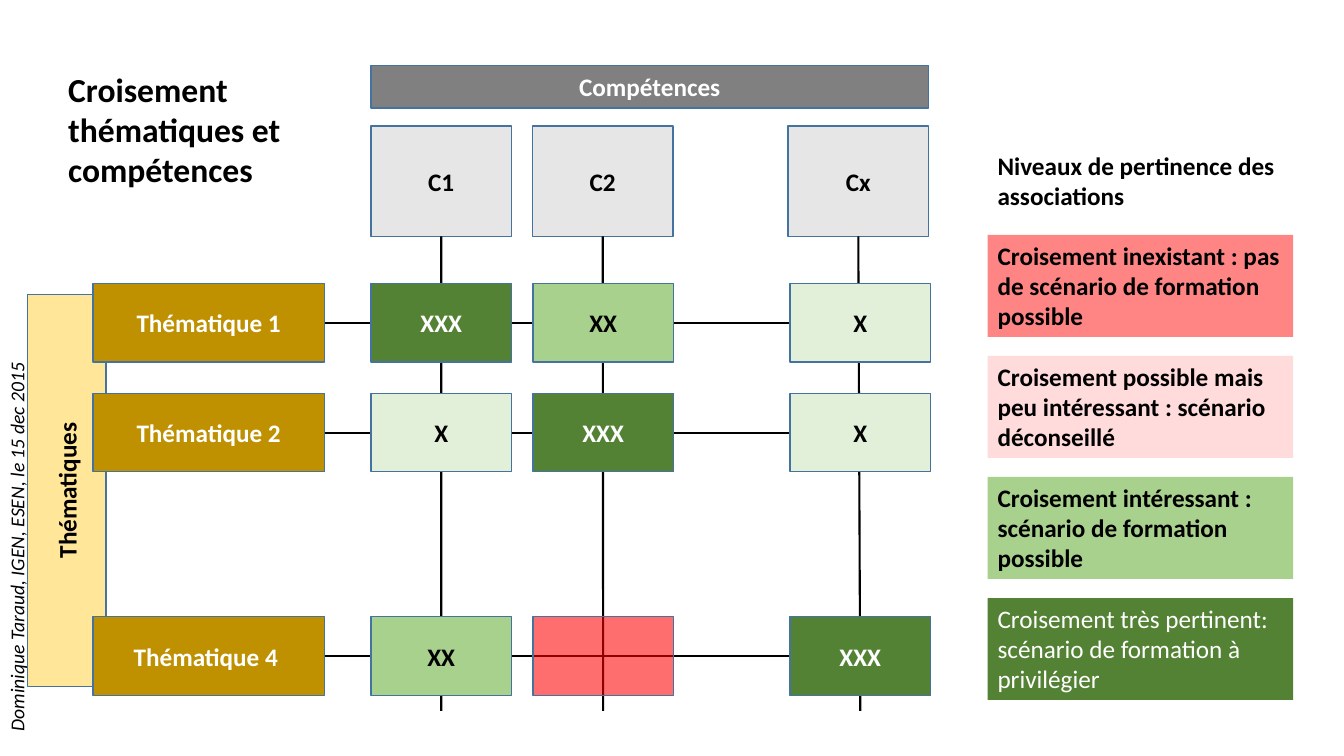
from lxml.etree import SubElement
from pptx import Presentation
from pptx.dml.color import RGBColor
from pptx.enum.shapes import MSO_CONNECTOR, MSO_SHAPE
from pptx.enum.text import MSO_ANCHOR, MSO_AUTO_SIZE, PP_ALIGN
from pptx.oxml.ns import qn
from pptx.util import Cm, Pt

BLACK, WHITE = "000000", "FFFFFF"
DARK_GREEN, GREEN, PALE_GREEN, RED = "548235", "A9D18E", "E2F0D9", "FF0000"

prs = Presentation()
prs.slide_width, prs.slide_height = Cm(33.87), Cm(19.05)
slide = prs.slides.add_slide(prs.slide_layouts[6])


def add_box(left, top, width, height, text, color=BLACK, fill=None, alpha=100,
            bordered=False, size=18, bold=True, italic=False):
    frame = Cm(left), Cm(top), Cm(width), Cm(height)
    if bordered:
        sp = slide.shapes.add_shape(MSO_SHAPE.RECTANGLE, *frame)
        sp.shadow.inherit = False
        sp.line.color.rgb = RGBColor.from_string("43739E")
        sp.line.width = Pt(1)
    else:
        sp = slide.shapes.add_textbox(*frame)
    if fill:
        sp.fill.solid()
        sp.fill.fore_color.rgb = RGBColor.from_string(fill)
    if alpha < 100:
        srgb = sp.element.spPr.find(qn("a:solidFill")).find(qn("a:srgbClr"))
        SubElement(srgb, qn("a:alpha")).set("val", str(alpha * 1000))
    tf = sp.text_frame
    tf.word_wrap = True
    tf.vertical_anchor = MSO_ANCHOR.MIDDLE if bordered else MSO_ANCHOR.TOP
    tf.auto_size = MSO_AUTO_SIZE.NONE if bordered else MSO_AUTO_SIZE.SHAPE_TO_FIT_TEXT
    tf.text = text
    p = tf.paragraphs[0]
    p.alignment = PP_ALIGN.CENTER if bordered else PP_ALIGN.LEFT
    for r in p.runs:
        r.font.name = "Calibri"
        r.font.size = Pt(size)
        r.font.bold = bold
        r.font.italic = italic
        r.font.color.rgb = RGBColor.from_string(color)
    return sp


def add_line(x1, y1, x2, y2):
    line = slide.shapes.add_connector(MSO_CONNECTOR.STRAIGHT, Cm(x1), Cm(y1), Cm(x2), Cm(y2))
    line.line.color.rgb = RGBColor.from_string(BLACK)
    line.line.width = Pt(1.5)
    SubElement(line.element.spPr, qn("a:effectLst"))
    return line


credit = add_box(-6.27, 11.56, 13.39, 0.86, "Dominique Taraud, IGEN, ESEN, le 15 dec 2015",
                 size=14, bold=False, italic=True)
credit.rotation = 270
add_box(1.47, 1.6, 6.65, 3.33, "Croisement thématiques et compétences", size=24)

themes = add_box(0.69, 7.42, 1.98, 9.88, "Thématiques", fill="FFE699", bordered=True)
themes.element.txBody.bodyPr.set("vert", "vert270")
add_box(9.35, 1.65, 14.05, 1.07, "Compétences", WHITE, "808080", bordered=True)

cell_w, cell_h = 3.54, 1.98
columns = [("C1", 9.35, 9.35), ("C2", 13.42, 13.43), ("Cx", 19.86, 19.91)]
rows = [
    ("Thématique 1", 7.14, ("XXX", "XX", "X")),
    ("Thématique 2", 9.91, ("X", "XXX", "X")),
    ("Thématique 4 ", 15.54, ("XX", "", "XXX")),
]
levels = {
    "XXX": (WHITE, DARK_GREEN, 100),
    "XX": (BLACK, GREEN, 100),
    "X": (BLACK, PALE_GREEN, 100),
    "": (BLACK, RED, 57),
}

for name, header_left, cell_left in columns:
    header = add_box(header_left, 3.18, cell_w, 2.78, name, fill="E7E6E6", bordered=True)
    line = add_line(cell_left + cell_w / 2, 17.91, header_left + cell_w / 2, 5.96)
    line.end_connect(header, 2)

for name, top, marks in rows:
    theme = add_box(2.34, top, 5.84, cell_h, name, WHITE, "BF9000", bordered=True)
    middle = top + cell_h / 2
    line = add_line(8.18, middle, columns[-1][2], middle)
    line.begin_connect(theme, 3)
    for (_, _, left), mark in zip(columns, marks):
        color, fill, alpha = levels[mark]
        cell = add_box(left, top, cell_w, cell_h, mark, color, fill, alpha, bordered=True)
    line.end_connect(cell, 1)

add_box(24.89, 3.66, 7.7, 1.8, "Niveaux de pertinence des associations")
legend = [
    ("Croisement inexistant : pas de scénario de formation possible", BLACK, RED, 48, True),
    ("Croisement possible mais peu intéressant : scénario déconseillé", BLACK, RED, 14, True),
    ("Croisement intéressant : scénario de formation possible", BLACK, GREEN, 100, True),
    ("Croisement très pertinent: scénario de formation à privilégier", WHITE, DARK_GREEN, 100, False),
]
for i, (text, color, fill, alpha, bold) in enumerate(legend):
    add_box(24.89, 5.92 + 3.05 * i, 7.7, 2.57, text, color, fill, alpha, bold=bold)

prs.save("out.pptx")
